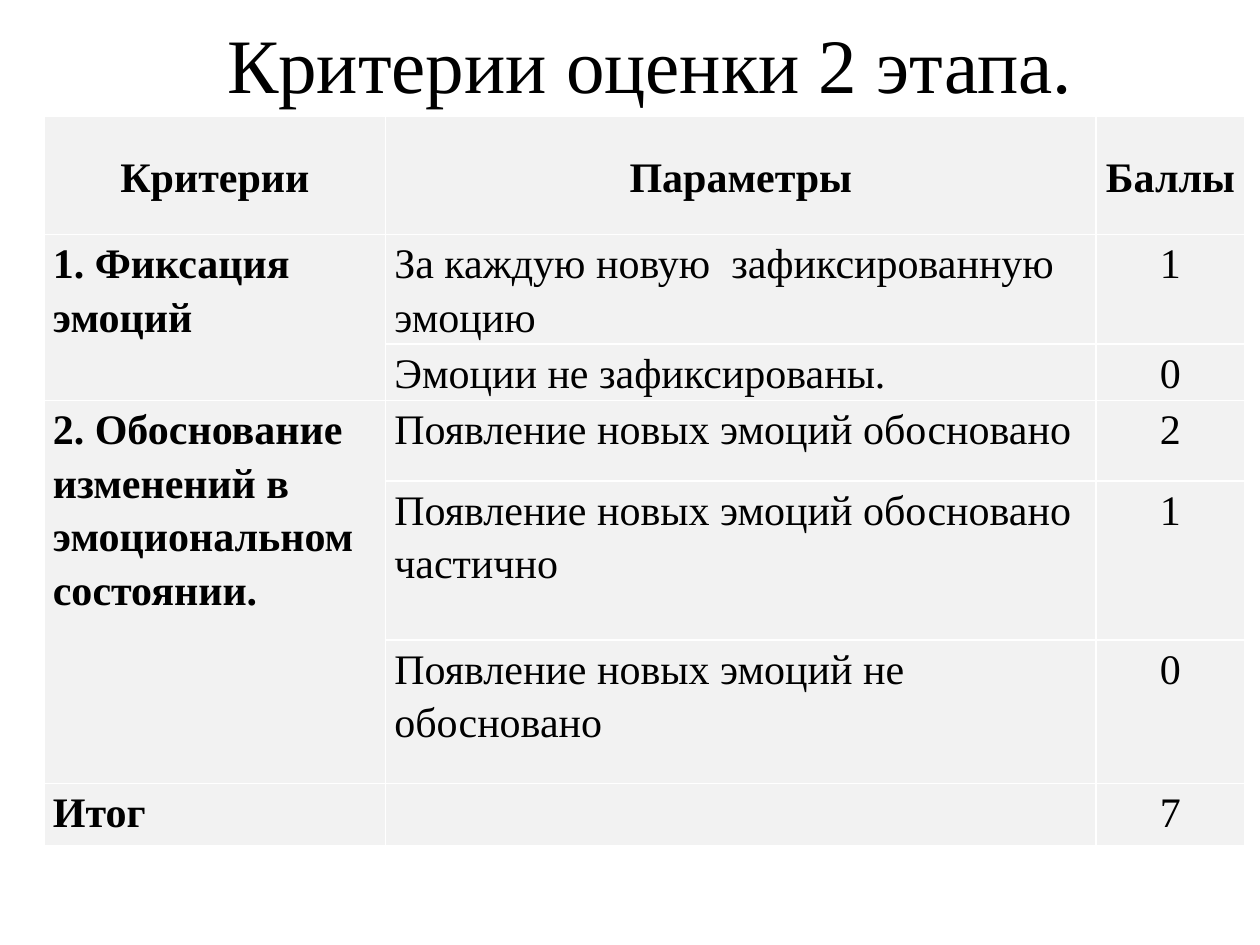
"""Build a slide with the grading criteria of the second stage."""
import dataclasses
import typing

import pptx
import pptx.dml.color
import pptx.enum.text
import pptx.util

Inches = pptx.util.Inches
Align = pptx.enum.text.PP_ALIGN
Anchor = pptx.enum.text.MSO_ANCHOR

BLACK = pptx.dml.color.RGBColor(0, 0, 0)
WHITE = pptx.dml.color.RGBColor(255, 255, 255)
CELL_GRAY = pptx.dml.color.RGBColor(0xF2, 0xF2, 0xF2)
FONT_NAME = "Times New Roman"
COLUMN_WIDTHS = (2.71, 5.64, 1.18)
COLUMN_ALIGNMENTS = (Align.LEFT, Align.LEFT, Align.CENTER)
CELL_FORMAT = {
    "margin_left": Inches(0.07),
    "margin_right": Inches(0.07),
    "margin_top": 0,
    "margin_bottom": 0,
}


@dataclasses.dataclass(frozen=True)
class CriteriaRow:
    """One table row; merged_rows is the number of rows its criterion covers."""

    height: float
    criterion: str
    parameter: str
    points: str
    merged_rows: int = 1


ROWS = (
    CriteriaRow(0.94, "Критерии", "Параметры", "Баллы"),
    CriteriaRow(0.87, "1. Фиксация эмоций", "За каждую новую  зафиксированную эмоцию", "1", 2),
    CriteriaRow(0.45, "", "Эмоции не зафиксированы.", "0"),
    CriteriaRow(
        0.64,
        "2. Обоснование изменений в эмоциональном состоянии.",
        "Появление новых эмоций обосновано",
        "2",
        3,
    ),
    CriteriaRow(1.26, "", "Появление новых эмоций обосновано частично", "1"),
    CriteriaRow(1.14, "", "Появление новых эмоций не обосновано", "0"),
    CriteriaRow(0.49, "Итог", "", "7"),
)


def set_attributes(target: typing.Any, values: dict[str, typing.Any]) -> None:
    """Set every named attribute of the target."""
    for name, value in values.items():
        setattr(target, name, value)


def write_text(
    text_frame: typing.Any, text: str, size: int, bold: bool, paragraph_format: dict[str, typing.Any]
) -> None:
    """Write one formatted paragraph into a text frame."""
    paragraph = text_frame.paragraphs[0]
    set_attributes(paragraph, paragraph_format)
    run = paragraph.add_run()
    run.text = text
    set_attributes(run.font, {"name": FONT_NAME, "size": pptx.util.Pt(size), "bold": bold})
    run.font.color.rgb = BLACK


def add_title(slide: typing.Any, text: str) -> None:
    """Place and fill the title placeholder."""
    title = slide.shapes.title
    set_attributes(
        title,
        {"left": Inches(0.91), "top": 0, "width": Inches(8.5), "height": Inches(1.61)},
    )
    set_attributes(
        title.text_frame,
        {"vertical_anchor": Anchor.TOP, "margin_top": Inches(0.13), "word_wrap": True},
    )
    write_text(title.text_frame, text, 44, False, {"alignment": Align.CENTER})


def fill_cell(cell: typing.Any, text: str, is_header: bool, column_index: int) -> None:
    """Color one table cell and write its text."""
    set_attributes(cell, CELL_FORMAT)
    cell.vertical_anchor = Anchor.MIDDLE if is_header else Anchor.TOP
    cell.fill.solid()
    cell.fill.fore_color.rgb = CELL_GRAY
    if text:
        alignment = Align.CENTER if is_header else COLUMN_ALIGNMENTS[column_index]
        bold = is_header or column_index == 0
        write_text(cell.text_frame, text, 24, bold, {"alignment": alignment, "line_spacing": 1.15})


def add_criteria_table(slide: typing.Any, rows: tuple[CriteriaRow, ...]) -> None:
    """Draw the criteria table."""
    table = slide.shapes.add_table(
        len(rows),
        len(COLUMN_WIDTHS),
        Inches(0.35),
        Inches(0.92),
        Inches(sum(COLUMN_WIDTHS)),
        Inches(sum(row.height for row in rows)),
    ).table
    for column, width in zip(table.columns, COLUMN_WIDTHS):
        column.width = Inches(width)
    for row_index, row in enumerate(rows):
        table.rows[row_index].height = Inches(row.height)
        for column_index, text in enumerate((row.criterion, row.parameter, row.points)):
            fill_cell(table.cell(row_index, column_index), text, row_index == 0, column_index)
        if row.merged_rows > 1:
            last_cell = table.cell(row_index + row.merged_rows - 1, 0)
            table.cell(row_index, 0).merge(last_cell)


def main() -> None:
    """Build and save the presentation."""
    presentation = pptx.Presentation()
    set_attributes(presentation, {"slide_width": Inches(10), "slide_height": Inches(7.5)})
    slide = presentation.slides.add_slide(presentation.slide_layouts[0])
    slide.background.fill.solid()
    slide.background.fill.fore_color.rgb = WHITE
    subtitle = slide.placeholders[1].element
    subtitle.getparent().remove(subtitle)
    add_title(slide, "Критерии оценки 2 этапа.")
    add_criteria_table(slide, ROWS)
    presentation.save("out.pptx")


if __name__ == "__main__":
    main()
